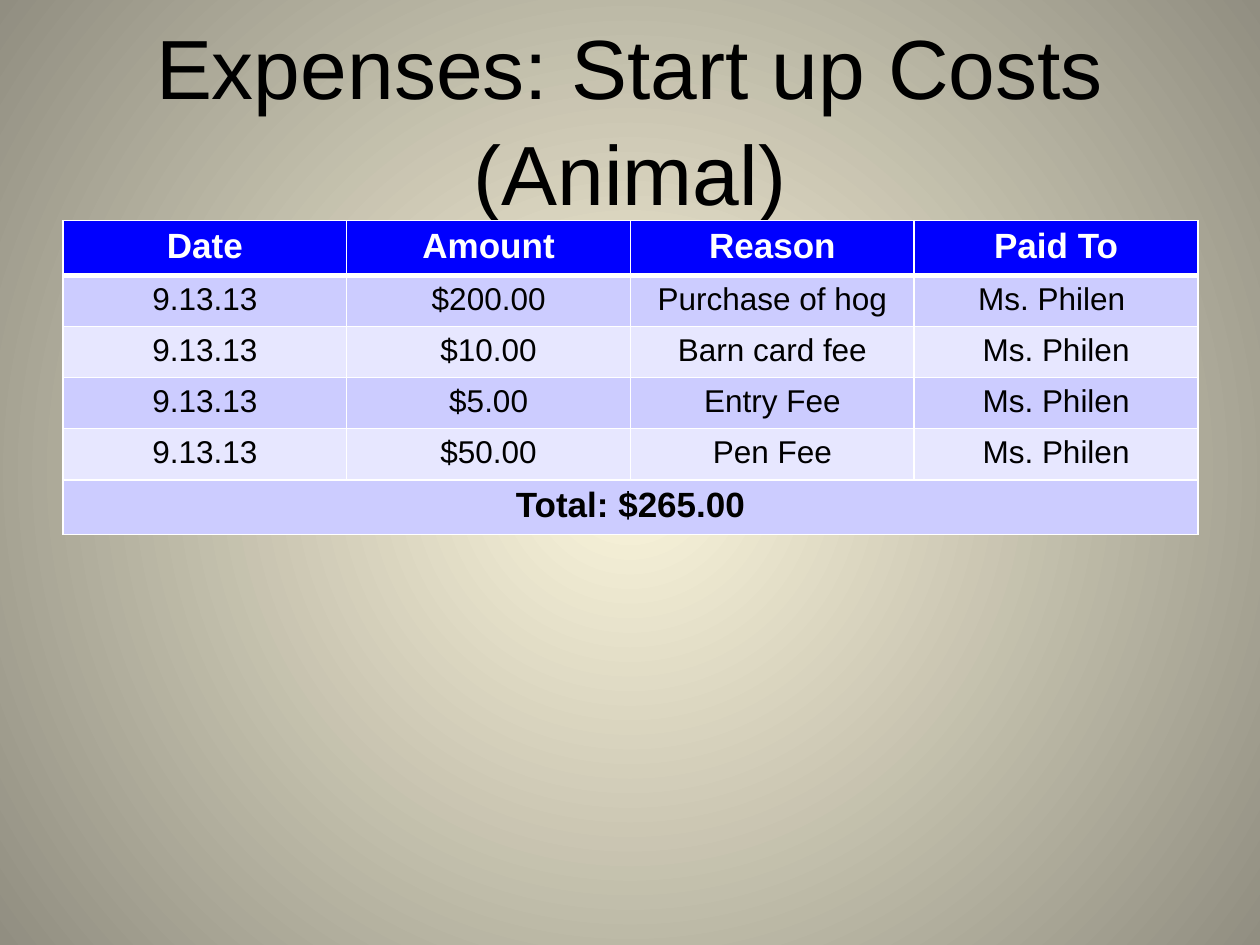
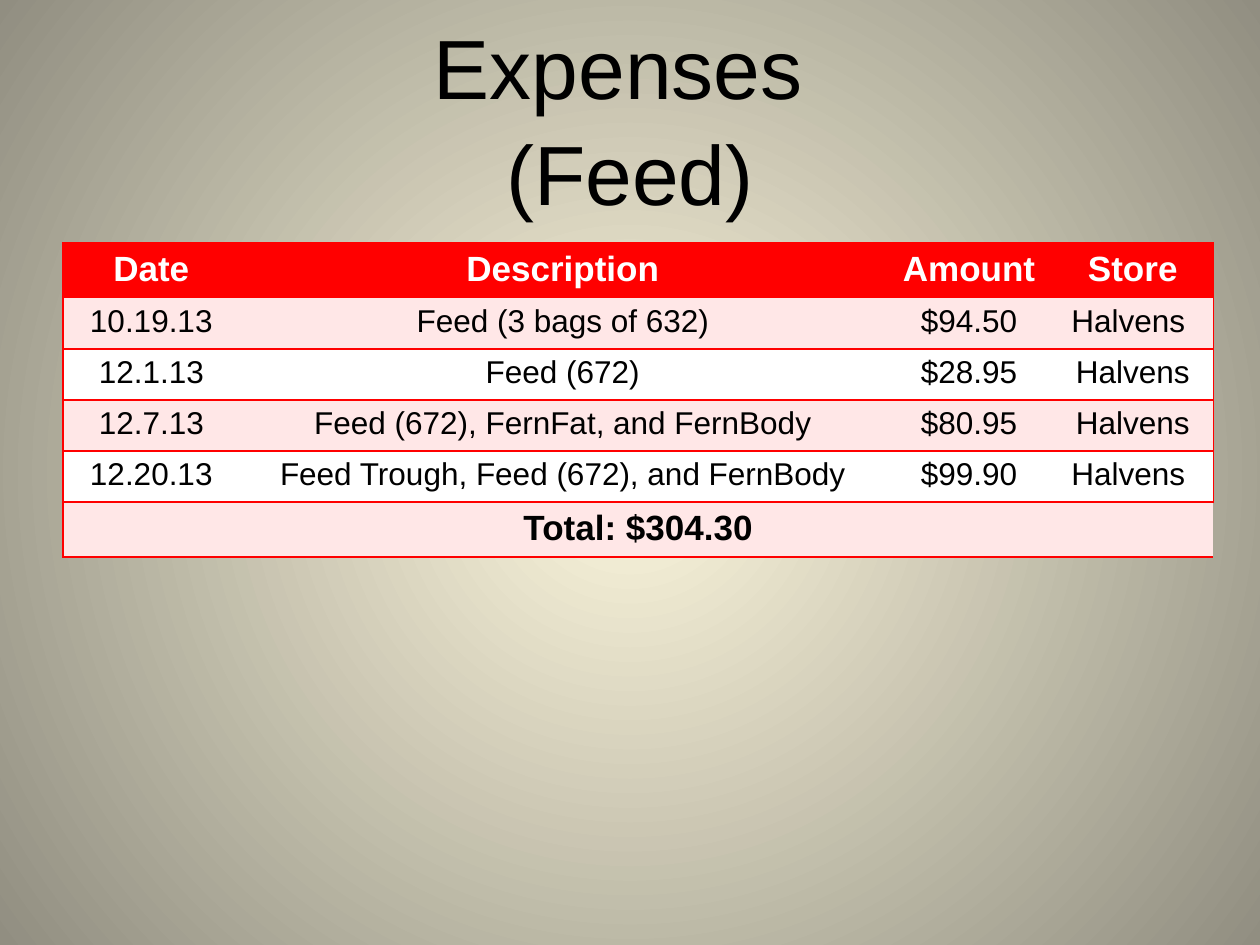
"""Build the two expense slides of a livestock project record book."""
from dataclasses import dataclass
from typing import Any

from lxml import etree
from pptx import Presentation
from pptx import util as u
from pptx.dml import color
from pptx.enum import text
from pptx.oxml import ns

FONT = "Arial"
BLACK, WHITE = "000000", "FFFFFF"
GLOW = ("FCF7DD", "918E81")
SLIDE_SIZE = {"slide_width": u.Cm(25.4), "slide_height": u.Cm(19.05)}
TITLE_BOX = (u.Cm(1.27), u.Cm(0.76), u.Cm(22.86), u.Cm(3.18))
TITLE_FRAME = {"word_wrap": True, "vertical_anchor": text.MSO_ANCHOR.MIDDLE}
TITLE_PARAGRAPH = {"alignment": text.PP_ALIGN.CENTER, "line_spacing": 1.05}
CELL_PARAGRAPH = {"alignment": text.PP_ALIGN.CENTER}
TITLE_FONT = {"name": FONT, "size": u.Pt(48), "bold": False}
STRONG_FONT = {"name": FONT, "size": u.Pt(20), "bold": True}
BODY_FONT = {"name": FONT, "size": u.Pt(18), "bold": False}
ROW_HEIGHT = u.Cm(1.03)


@dataclass(frozen=True)
class Palette:
    """Colours and rules of one expense table."""

    header: str
    bands: tuple[str, str]
    border: str
    header_rule: float
    inner_columns: bool


@dataclass(frozen=True)
class ExpenseSlide:
    """Title lines and ledger of one slide, with lengths in centimetres."""

    title: tuple[str, ...]
    top: float
    columns: tuple[float, ...]
    palette: Palette
    rows: tuple[tuple[str, ...], ...]
    total: str


BLUE = Palette("0000FF", ("CCCCFF", "E7E7FF"), WHITE, 3, True)
RED = Palette("FF0000", ("FFE7E7", WHITE), "FF0000", 1, False)

EXPENSE_SLIDES = (
    ExpenseSlide(
        ("Expenses: Start up Costs (Animal)",), 4.45, (5.72,) * 4, BLUE,
        (
            ("Date", "Amount", "Reason", "Paid To"),
            ("9.13.13", "$200.00", "Purchase of hog", "Ms. Philen "),
            ("9.13.13", "$10.00", "Barn card fee", "Ms. Philen"),
            ("9.13.13", "$5.00", "Entry Fee", "Ms. Philen"),
            ("9.13.13", "$50.00", "Pen Fee", "Ms. Philen"),
        ),
        "Total: $265.00",
    ),
    ExpenseSlide(
        ("Expenses ", "(Feed)"), 4.9, (3.56, 13.03, 3.35, 3.25), RED,
        (
            ("Date", "Description", "Amount", "Store"),
            ("10.19.13", "Feed (3 bags of 632)", "$94.50", "Halvens "),
            ("12.1.13", "Feed (672)", "$28.95", "Halvens"),
            ("12.7.13", "Feed (672), FernFat, and FernBody", "$80.95", "Halvens"),
            ("12.20.13", "Feed Trough, Feed (672), and FernBody", "$99.90", "Halvens "),
        ),
        "Total: $304.30",
    ),
)


def rgb(value: str) -> color.RGBColor:
    """Turn a hex string into a colour."""
    return color.RGBColor.from_string(value)


def apply_format(target: Any, values: dict[str, Any]) -> None:
    """Set every format value on the target."""
    for name, value in values.items():
        setattr(target, name, value)


def write_text(paragraph: Any, lines: tuple[str, ...], font_format: dict[str, Any],
               font_color: str, paragraph_format: dict[str, Any]) -> None:
    """Write lines into one paragraph, parted by line breaks."""
    apply_format(paragraph, paragraph_format)
    for index, line in enumerate(lines):
        if index:
            paragraph.add_line_break()
        run = paragraph.add_run()
        run.text = line
        apply_format(run.font, font_format)
        run.font.color.rgb = rgb(font_color)
    apply_format(paragraph.font, font_format)


def paint_background(master: Any) -> None:
    """Give the master a glow that spreads from the centre."""
    fill = master.background.fill
    fill.gradient()
    for stop, value in zip(fill.gradient_stops, GLOW):
        stop.color.rgb = rgb(value)
    gradient = master.element.find(".//" + ns.qn("p:bgPr") + "/" + ns.qn("a:gradFill"))
    gradient.remove(gradient.find(ns.qn("a:lin")))
    spread = etree.SubElement(gradient, ns.qn("a:path"), {"path": "circle"})
    etree.SubElement(spread, ns.qn("a:fillToRect"), dict.fromkeys("ltrb", "50000"))


def set_borders(cell: Any, border: str, widths: dict[str, float]) -> None:
    """Draw cell borders, leaving out those of zero width."""
    properties = cell._tc.get_or_add_tcPr()
    for index, (side, width) in enumerate(widths.items()):
        line = etree.Element(ns.qn(f"a:ln{side}"), {"w": str(u.Pt(width))})
        properties.insert(index, line)
        if width:
            fill = etree.SubElement(line, ns.qn("a:solidFill"))
            etree.SubElement(fill, ns.qn("a:srgbClr"), {"val": border})
        else:
            etree.SubElement(line, ns.qn("a:noFill"))


def add_title(slide: Any, lines: tuple[str, ...]) -> None:
    """Add the large centred title."""
    frame = slide.shapes.add_textbox(*TITLE_BOX).text_frame
    apply_format(frame, TITLE_FRAME)
    write_text(frame.paragraphs[0], lines, TITLE_FONT, BLACK, TITLE_PARAGRAPH)


def add_ledger(slide: Any, expense: ExpenseSlide) -> None:
    """Add the expense table with its header, banded rows and total."""
    palette = expense.palette
    last_column = len(expense.columns) - 1
    total_row = len(expense.rows)
    rows = expense.rows + ((expense.total,) + ("",) * last_column,)
    table = slide.shapes.add_table(
        len(rows), len(expense.columns), u.Cm(1.27), u.Cm(expense.top),
        u.Cm(sum(expense.columns)), ROW_HEIGHT * len(rows)).table
    for column, width in zip(table.columns, expense.columns):
        column.width = u.Cm(width)
    inner = int(palette.inner_columns)
    for row_index, values in enumerate(rows):
        table.rows[row_index].height = ROW_HEIGHT
        is_header = row_index == 0
        strong = is_header or row_index == total_row
        band = palette.header if is_header else palette.bands[(row_index - 1) % 2]
        for column_index, value in enumerate(values):
            cell = table.cell(row_index, column_index)
            cell.fill.solid()
            cell.fill.fore_color.rgb = rgb(band)
            set_borders(cell, palette.border, {
                "L": 1 if column_index == 0 else inner,
                "R": 1 if column_index == last_column else inner,
                "T": palette.header_rule if row_index == 1 else 1,
                "B": palette.header_rule if is_header else 1,
            })
            if value:
                write_text(cell.text_frame.paragraphs[0], (value,),
                           STRONG_FONT if strong else BODY_FONT,
                           WHITE if is_header else BLACK, CELL_PARAGRAPH)
    table.cell(total_row, 0).merge(table.cell(total_row, last_column))


def main() -> None:
    """Build and save the presentation."""
    presentation = Presentation()
    apply_format(presentation, SLIDE_SIZE)
    paint_background(presentation.slide_master)
    for expense in EXPENSE_SLIDES:
        slide = presentation.slides.add_slide(presentation.slide_layouts[6])
        add_title(slide, expense.title)
        add_ledger(slide, expense)
    presentation.save("out.pptx")


if __name__ == "__main__":
    main()
